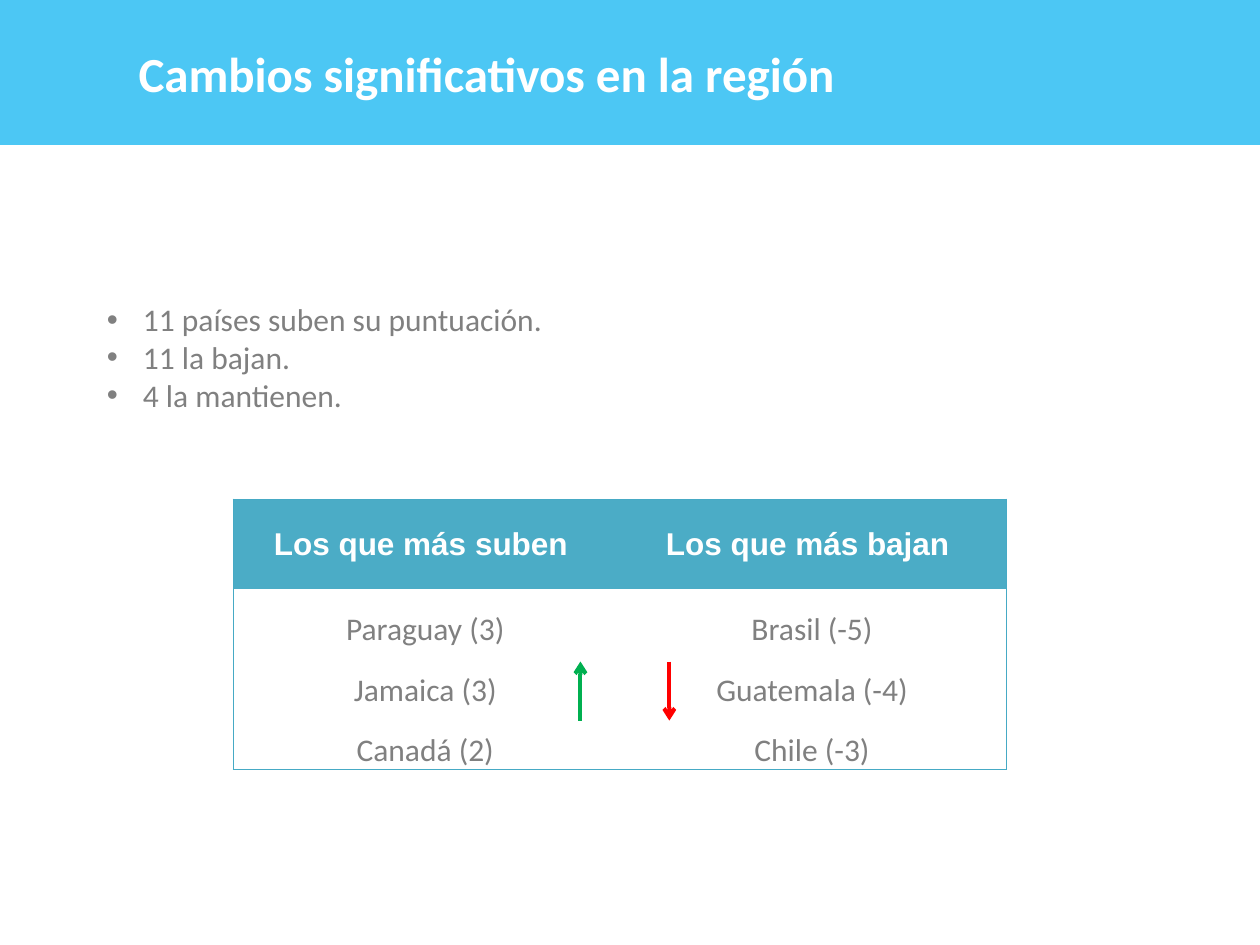
from lxml.etree import SubElement
from pptx import Presentation
from pptx.dml.color import RGBColor
from pptx.enum.shapes import MSO_CONNECTOR
from pptx.enum.text import MSO_ANCHOR, MSO_AUTO_SIZE, PP_ALIGN
from pptx.oxml import parse_xml
from pptx.oxml.ns import nsdecls, qn
from pptx.util import Pt

COLORS = {
    "band": "00B0F0",
    "white": "FFFFFF",
    "text": "808080",
    "header": "4BACC6",
    "border": "46AAC5",
    "up": "00B050",
    "down": "FF0000",
}
TITLE = "Cambios significativos en la región"
POINTS = ["11 países suben su puntuación. ", "11 la bajan.", "4 la mantienen."]
RANKING = [
    ("Los que más suben ", "Los que más bajan "),
    ("Paraguay (3)", "Brasil (-5)"),
    ("Jamaica (3)", "Guatemala (-4)"),
    ("Canadá (2)", "Chile (-3)"),
]


def color(name):
    return RGBColor.from_string(COLORS[name])


def add_span(para, text, size, font, fill, bold=False):
    span = para.add_run()
    span.text = text
    span.font.size = Pt(size)
    span.font.name = font
    span.font.bold = bold
    span.font.color.rgb = color(fill)


def place_title(page, left, top, width, height):
    box = page.shapes.title
    box.left, box.top, box.width, box.height = map(Pt, (left, top, width, height))
    box.fill.solid()
    box.fill.fore_color.rgb = color("band")
    tint = box.element.spPr.find(f"{qn('a:solidFill')}/{qn('a:srgbClr')}")
    SubElement(tint, qn("a:alpha"), val="70000")
    frame = box.text_frame
    frame.auto_size = MSO_AUTO_SIZE.NONE
    frame.vertical_anchor = MSO_ANCHOR.MIDDLE
    frame.margin_left = Pt(79.2)
    para = frame.paragraphs[0]
    para.alignment = PP_ALIGN.LEFT
    add_span(para, TITLE, 28, "Calibri", "white", True)


def place_points(page, left, top, width, height):
    box = page.shapes.add_textbox(Pt(left), Pt(top), Pt(width), Pt(height))
    frame = box.text_frame
    frame.word_wrap = True
    frame.auto_size = MSO_AUTO_SIZE.SHAPE_TO_FIT_TEXT
    for index, text in enumerate(POINTS):
        para = frame.add_paragraph() if index else frame.paragraphs[0]
        para.alignment = PP_ALIGN.JUSTIFY
        add_span(para, text, 18, "Calibri", "text")
        props = para._p.get_or_add_pPr()
        props.set("marL", str(Pt(20.6)))
        props.set("indent", str(-Pt(20.6)))
        SubElement(props, qn("a:buFont"), typeface="Arial")
        SubElement(props, qn("a:buChar"), char="•")


def set_borders(cell, visible):
    props = cell._tc.get_or_add_tcPr()
    for index, (side, shown) in enumerate(visible.items()):
        fill = (
            f'<a:solidFill><a:srgbClr val="{COLORS["border"]}"/></a:solidFill>'
            if shown else "<a:noFill/>"
        )
        line = f'<a:{side} {nsdecls("a")} w="{Pt(0.75)}">{fill}</a:{side}>'
        props.insert(index, parse_xml(line))


def place_ranking(page, left, top, widths, heights):
    rows, cols = len(heights), len(widths)
    table = page.shapes.add_table(
        rows, cols, Pt(left), Pt(top), Pt(sum(widths)), Pt(sum(heights))
    ).table
    for column, width in zip(table.columns, widths):
        column.width = Pt(width)
    for r, height in enumerate(heights):
        table.rows[r].height = Pt(height)
        for c in range(cols):
            cell = table.cell(r, c)
            cell.margin_left = cell.margin_right = cell.margin_top = Pt(0.7)
            cell.margin_bottom = Pt(0)
            para = cell.text_frame.paragraphs[0]
            para.alignment = PP_ALIGN.CENTER
            if r == 0:
                cell.vertical_anchor = MSO_ANCHOR.MIDDLE
                cell.fill.solid()
                cell.fill.fore_color.rgb = color("header")
                add_span(para, RANKING[r][c], 18, "Arial", "white", True)
            else:
                cell.vertical_anchor = MSO_ANCHOR.BOTTOM
                cell.fill.background()
                add_span(para, RANKING[r][c], 18, "Calibri", "text")
            set_borders(cell, {
                "lnL": c == 0, "lnR": c == cols - 1,
                "lnT": r == 0, "lnB": r == rows - 1,
            })


def place_arrow(page, x, start, end, fill):
    arrow = page.shapes.add_connector(
        MSO_CONNECTOR.STRAIGHT, Pt(x), Pt(start), Pt(x), Pt(end)
    )
    arrow.line.width = Pt(2.25)
    arrow.line.color.rgb = color(fill)
    SubElement(arrow.line._get_or_add_ln(), qn("a:tailEnd"), type="arrow")
    SubElement(arrow.element.spPr, qn("a:effectLst"))


def main():
    deck = Presentation()
    deck.slide_width, deck.slide_height = Pt(720), Pt(540)
    page = deck.slides.add_slide(deck.slide_layouts[5])
    place_title(page, 0, 0, 720, 82.8)
    place_points(page, 54, 168, 499, 72.7)
    place_ranking(page, 133.2, 285.2, [219.6, 222.5], [51.5, 34.4, 34.4, 34.4])
    place_arrow(page, 382.5, 378, 411.8, "down")
    place_arrow(page, 331.7, 411.8, 378, "up")
    deck.save("out.pptx")


if __name__ == "__main__":
    main()
